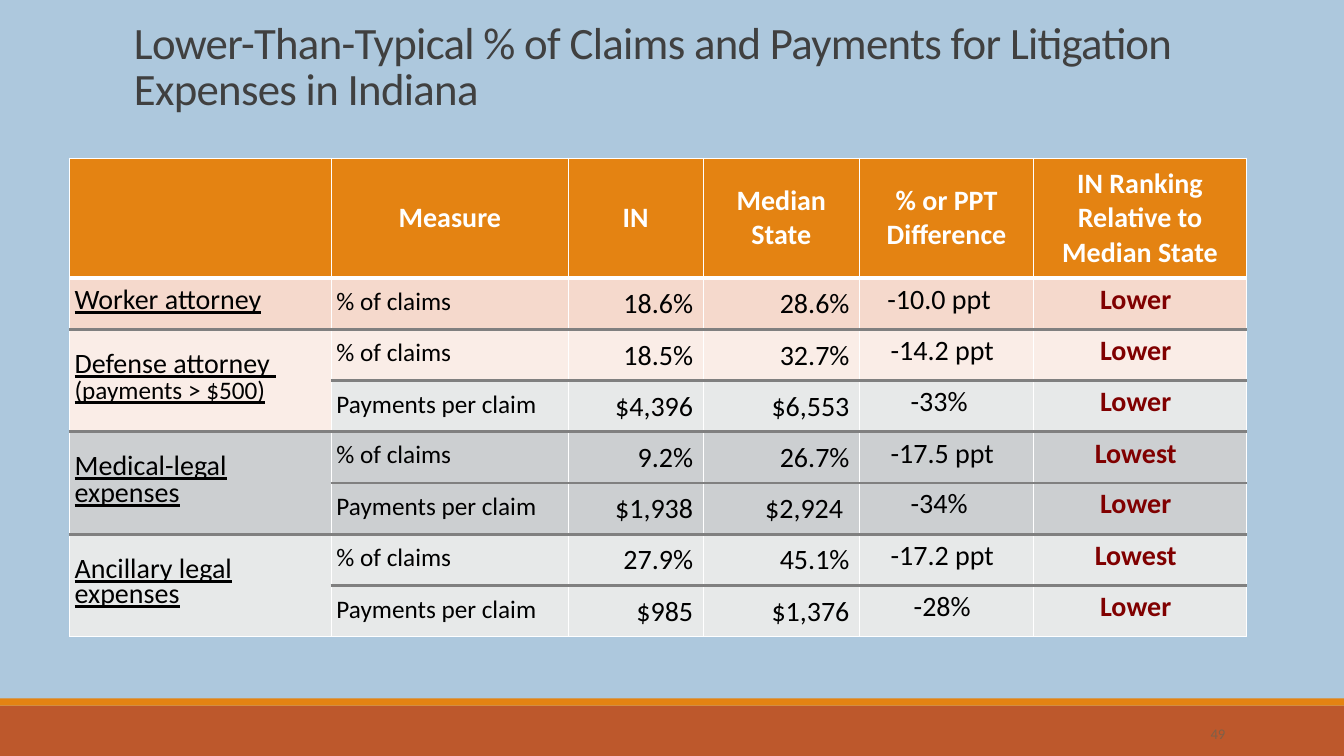
"""Build the slide on litigation claims and payments in Indiana."""
from typing import NamedTuple

import pptx
import pptx.dml.color
import pptx.enum.shapes
import pptx.enum.text
import pptx.oxml
import pptx.oxml.ns
import pptx.util

Cm, Pt = pptx.util.Cm, pptx.util.Pt
ALIGN = pptx.enum.text.PP_ALIGN
ANCHOR = pptx.enum.text.MSO_ANCHOR
WHITE, GREY, BLACK, DARK_RED = "FFFFFF", "808080", "000000", "800000"
ORANGE, RUST, SKY = "E48312", "BD582C", "ADC8DD"
ROSE, BLUSH, SILVER, STEEL = "F5D9CC", "FAEDE7", "E7E9E9", "CCCFD1"
COL_WIDTHS = [6.6, 5.97, 3.4, 3.94, 4.39, 5.36]
HEADER_H, ROW_H = 3.02, 1.29
HEADINGS = ["", "Measure", "IN", "Median State", "% or PPT Difference",
            "IN Ranking Relative to Median State"]


class Bar(NamedTuple):
    top: float
    height: float
    color: str


class Line(NamedTuple):
    color: str
    width: float


class Style(NamedTuple):
    align: ALIGN = ALIGN.LEFT
    color: str = BLACK
    size: float = 20
    bold: bool = False
    underline: bool = False


class Row(NamedTuple):
    label: str
    fill: str
    values: list[str]
    label_spacing: float = 18
    measure_spacing: float = 18
    result_spacing: float = 18


BARS = [Bar(17.78, 1.27, RUST), Bar(17.6, 0.18, ORANGE)]
THIN, RULE, THICK = Line(WHITE, 1), Line(GREY, 2.25), Line(WHITE, 3)
HEADER = Style(ALIGN.CENTER, WHITE, bold=True)
COLUMN_STYLES = [Style(underline=True), Style(size=18), Style(ALIGN.RIGHT), Style(ALIGN.RIGHT),
                 Style(ALIGN.CENTER), Style(ALIGN.CENTER, DARK_RED, bold=True)]
ROWS = [
    Row("Worker attorney", ROSE, ["% of claims", "18.6%", "28.6%", "-10.0 ppt ", "Lower"]),
    Row("Defense attorney \n(payments > $500)", BLUSH,
        ["% of claims", "18.5%", "32.7%", "-14.2 ppt", "Lower"]),
    Row("", SILVER, ["Payments per claim", "$4,396", "$6,553", "-33% ", "Lower"],
        measure_spacing=19),
    Row("Medical-legal expenses", STEEL,
        ["% of claims", "9.2%", "26.7%", "-17.5 ppt", "Lowest"], label_spacing=19),
    Row("", STEEL, ["Payments per claim", "$1,938", "$2,924 ", "-34% ", "Lower"],
        measure_spacing=19, result_spacing=17),
    Row("Ancillary legal expenses", SILVER,
        ["% of claims", "27.9%", "45.1%", "-17.2 ppt", "Lowest"]),
    Row("", SILVER, ["Payments per claim", "$985", "$1,376", "-28%", "Lower"],
        measure_spacing=19),
]


def rgb(color: str) -> pptx.dml.color.RGBColor:
    """Turn a hex string into a colour."""
    return pptx.dml.color.RGBColor.from_string(color)


def set_all(obj: object, values: dict) -> None:
    """Set attributes of an object from a dict."""
    for name, value in values.items():
        setattr(obj, name, value)


def write(p, text: str, style: Style, spacing: float | pptx.util.Length | None = None) -> None:
    """Write one formatted run into a paragraph."""
    set_all(p, {"alignment": style.align, "line_spacing": spacing})
    r = p.add_run()
    r.text = text
    set_all(r.font, {"name": "Calibri", "size": Pt(style.size), "bold": style.bold,
                     "underline": style.underline})
    r.font.color.rgb = rgb(style.color)


def add_bar(slide, bar: Bar, width: int) -> None:
    """Draw a full-width footer bar."""
    sp = slide.shapes.add_shape(pptx.enum.shapes.MSO_SHAPE.RECTANGLE,
                                0, Cm(bar.top), width, Cm(bar.height))
    sp.shadow.inherit = False
    sp.fill.solid()
    sp.fill.fore_color.rgb = rgb(bar.color)
    sp.line.fill.background()


def add_title(slide, text: str) -> None:
    """Fill and place the title placeholder."""
    sp = slide.shapes.title
    set_all(sp, {"left": Cm(3.12), "top": Cm(0.46), "width": Cm(30.48), "height": Cm(3.63)})
    tf = sp.text_frame
    set_all(tf, {"word_wrap": True, "vertical_anchor": ANCHOR.TOP,
                 "auto_size": pptx.enum.text.MSO_AUTO_SIZE.NONE})
    p = tf.paragraphs[0]
    write(p, text, Style(color="404040", size=32), 0.85)
    p.runs[0].font._element.set("spc", "-50")


def add_page_number(slide, text: str) -> None:
    """Place the page number on the footer bar."""
    sp = slide.shapes.add_textbox(Cm(27.8), Cm(18), Cm(3.33), Cm(0.95))
    tf = sp.text_frame
    set_all(tf, {"word_wrap": True, "vertical_anchor": ANCHOR.MIDDLE})
    write(tf.paragraphs[0], text, Style(ALIGN.RIGHT, "7F6048", 10.5))


def format_cell(cell, fill: str, top: Line, bottom: Line) -> None:
    """Set the borders, fill and anchor of a cell."""
    tc_pr = cell._tc.get_or_add_tcPr()
    for side, line in zip("LRTB", (THIN, THIN, top, bottom)):
        tc_pr.append(pptx.oxml.parse_xml(
            f'<a:ln{side} {pptx.oxml.ns.nsdecls("a")} w="{Pt(line.width)}">'
            f'<a:solidFill><a:srgbClr val="{line.color}"/></a:solidFill></a:ln{side}>'))
    cell.fill.solid()
    cell.fill.fore_color.rgb = rgb(fill)
    cell.vertical_anchor = ANCHOR.MIDDLE


def fill_row(table, i: int, row: Row) -> None:
    """Write one data row of the table."""
    top = THICK if i == 1 else RULE
    bottom = THIN if i == len(ROWS) else RULE
    spacings = [row.label_spacing, row.measure_spacing, None, None,
                row.result_spacing, row.result_spacing]
    for j, (text, style, spacing) in enumerate(
            zip([row.label, *row.values], COLUMN_STYLES, spacings)):
        cell = table.cell(i, j)
        merged_to_end = cell.is_merge_origin and i + 1 == len(ROWS)
        format_cell(cell, row.fill, top, THIN if merged_to_end else bottom)
        left, right = (0.13, 0.03) if j < 2 else (0.03, 0.25)
        set_all(cell, {"margin_left": Cm(left), "margin_right": Cm(right),
                       "margin_top": Cm(0.03), "margin_bottom": 0})
        tf = cell.text_frame
        for k, part in enumerate(text.split("\n") if text else []):
            p = tf.add_paragraph() if k else tf.paragraphs[0]
            write(p, part, style._replace(size=18) if k else style,
                  Pt(spacing) if spacing else None)


def add_comparison(slide) -> None:
    """Add the table comparing Indiana with the median state."""
    height = HEADER_H + ROW_H * len(ROWS)
    table = slide.shapes.add_table(len(ROWS) + 1, len(COL_WIDTHS), Cm(1.75), Cm(3.99),
                                   Cm(sum(COL_WIDTHS)), Cm(height)).table
    table.horz_banding = False
    for column, width in zip(table.columns, COL_WIDTHS):
        column.width = Cm(width)
    for i, table_row in enumerate(table.rows):
        table_row.height = Cm(ROW_H if i else HEADER_H)
    for j, heading in enumerate(HEADINGS):
        cell = table.cell(0, j)
        format_cell(cell, ORANGE, THIN, THICK)
        if heading:
            write(cell.text_frame.paragraphs[0], heading, HEADER)
    for i, row in enumerate(ROWS, 1):
        if not row.label:
            table.cell(i - 1, 0).merge(table.cell(i, 0))
    for i, row in enumerate(ROWS, 1):
        fill_row(table, i, row)


def main() -> None:
    """Build and save the presentation."""
    prs = pptx.Presentation()
    set_all(prs, {"slide_width": Cm(33.87), "slide_height": Cm(19.05)})
    slide = prs.slides.add_slide(prs.slide_layouts[5])
    slide.background.fill.solid()
    slide.background.fill.fore_color.rgb = rgb(SKY)
    for bar in BARS:
        add_bar(slide, bar, prs.slide_width)
    add_title(slide, "Lower-Than-Typical % of Claims and Payments for Litigation "
                     "Expenses in Indiana")
    add_comparison(slide)
    add_page_number(slide, "49")
    prs.save("out.pptx")


if __name__ == "__main__":
    main()
